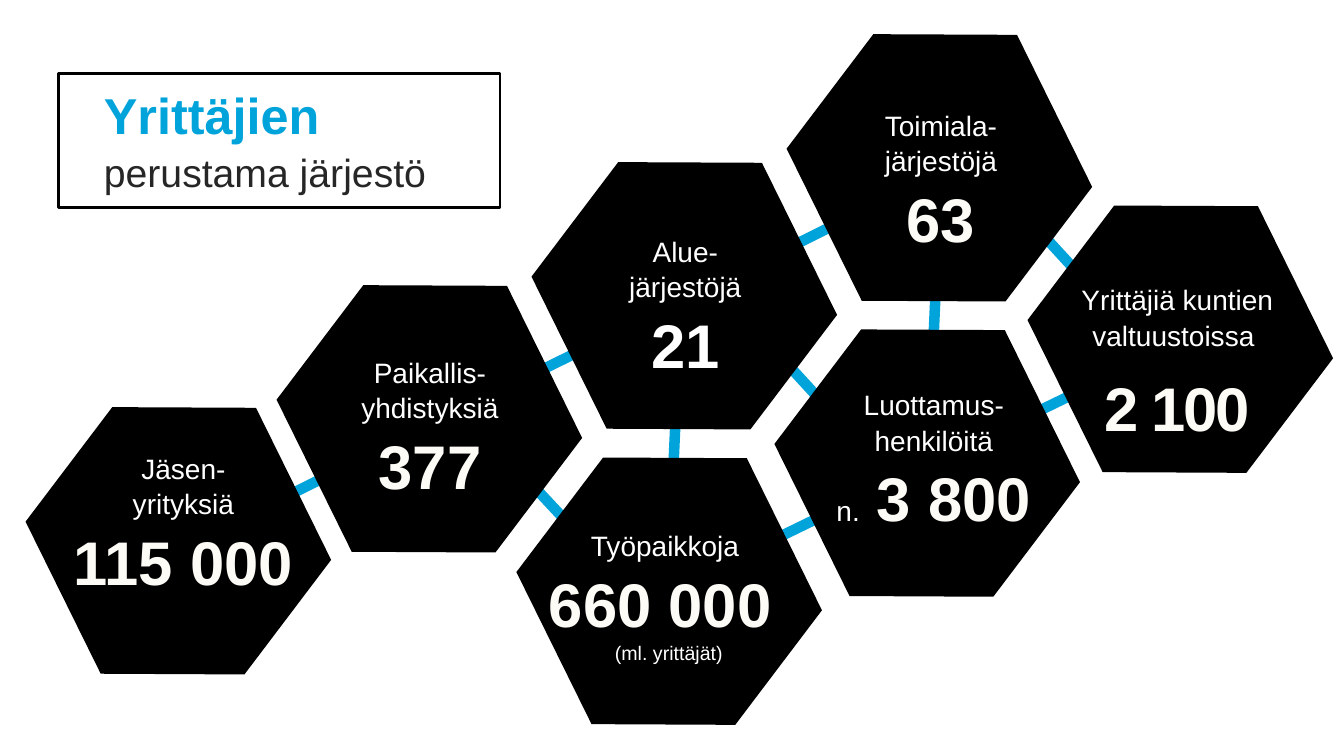
from dataclasses import dataclass

from lxml import etree
from pptx import Presentation
from pptx.dml.color import RGBColor
from pptx.enum.shapes import MSO_CONNECTOR, MSO_SHAPE
from pptx.enum.text import MSO_AUTO_SIZE, PP_ALIGN
from pptx.oxml.ns import qn
from pptx.util import Pt

LINE = MSO_CONNECTOR.STRAIGHT
HEXAGON = MSO_SHAPE.HEXAGON
RECT = MSO_SHAPE.RECTANGLE
GROW = MSO_AUTO_SIZE.SHAPE_TO_FIT_TEXT
FIXED = MSO_AUTO_SIZE.NONE
CENTER = PP_ALIGN.CENTER
LEFT = PP_ALIGN.LEFT


@dataclass(frozen=True)
class Theme:
    """Colours, font and type sizes of the slide."""
    font: str = "Arial"
    blue: str = "00A3DA"
    black: str = "000000"
    gray: str = "262626"
    white: str = "FFFFFF"
    cream: str = "FDFBF6"
    head: int = 36
    sub: int = 28
    label: int = 20
    value: int = 44
    note: int = 14


@dataclass(frozen=True)
class Run:
    """A piece of text with its look."""
    text: str
    size: int
    color: str
    bold: bool = False


class Board:
    """Draws the elements of one slide in a given theme."""

    def __init__(self, slide, theme):
        self.shapes = slide.shapes
        self.theme = theme

    def link(self, x1, y1, x2, y2):
        """Draw a thick blue line."""
        line = self.shapes.add_connector(LINE, Pt(x1), Pt(y1), Pt(x2), Pt(y2))
        line.line.width = Pt(7.5)
        line.line.color.rgb = RGBColor.from_string(self.theme.blue)
        etree.SubElement(line._element.spPr, qn("a:effectLst"))

    def cell(self, left, top):
        """Draw a tilted black hexagon."""
        cell = self.shapes.add_shape(HEXAGON, Pt(left), Pt(top), Pt(213), Pt(183.6))
        cell.rotation = 63.7
        cell.shadow.inherit = False
        cell.fill.solid()
        cell.fill.fore_color.rgb = RGBColor.from_string(self.theme.black)
        cell.line.fill.background()

    def frame(self, left, top, width, height):
        """Draw an outlined box."""
        box = self.shapes.add_shape(RECT, Pt(left), Pt(top), Pt(width), Pt(height))
        box.shadow.inherit = False
        box.fill.background()
        box.line.width = Pt(2)
        box.line.color.rgb = RGBColor.from_string(self.theme.black)

    def style(self, font, run):
        """Apply the look of a run to a font."""
        font.name = self.theme.font
        font.size = Pt(run.size)
        font.bold = run.bold
        font.color.rgb = RGBColor.from_string(run.color)

    def text(self, box, rows, align=CENTER, side=7.2, edge=3.6,
             pitch=1.05, gap=0, fit=GROW):
        """Write rows of runs, one paragraph a row."""
        left, top, width, height = box
        frame = self.shapes.add_textbox(Pt(left), Pt(top), Pt(width), Pt(height)).text_frame
        frame.word_wrap = True
        frame.auto_size = fit
        frame.margin_left = frame.margin_right = Pt(side)
        frame.margin_top = frame.margin_bottom = Pt(edge)
        for index, row in enumerate(rows):
            para = frame.add_paragraph() if index else frame.paragraphs[0]
            para.alignment = align
            para.line_spacing = pitch
            para.space_before = Pt(gap if index else 0)
            for run in row:
                piece = para.add_run()
                piece.text = run.text
                if len(row) > 1:
                    self.style(piece.font, run)
            if len(row) == 1:
                self.style(para.font, row[0])
        return frame


THEME = Theme()

LINKS = [
    (474.5, 423.4, 842.4, 244.8),
    (483.1, 287.3, 480.2, 352.1),
    (668.9, 195.1, 666, 259.9),
    (735.1, 157, 774.7, 200.2),
    (553, 249.8, 592.6, 293),
    (370.8, 336.2, 410.4, 378.7),
    (141.1, 385.9, 692.6, 113),
]

CELLS = [
    (564.5, 28.1), (555.8, 239), (382.3, 119.5), (371.5, 330.5),
    (200.2, 207.4), (20.9, 294.5), (736.6, 150.5),
]


def label(text):
    """Return a row with a plain white label."""
    return [Run(text, THEME.label, THEME.white)]


def value(text, color=THEME.cream):
    """Return a row with a large bold figure."""
    return [Run(text, THEME.value, color, True)]


FACTS = [
    ((204.5, 249.1, 205.2, 108.7),
     [label("Paikallis-"), label("yhdistyksiä"), value("377")]),
    ((390.2, 162.7, 198.7, 108.7),
     [label("Alue-"), label("järjestöjä"), value("21", THEME.white)]),
    ((568.1, 72.7, 208.1, 108.7),
     [label("Toimiala-"), label("järjestöjä"), value("63")]),
    ((562.3, 272.2, 209.5, 108.7),
     [label("Luottamus-"), label("henkilöitä"), label("n.") + value(" 3 800")]),
    ((22.3, 317.5, 217.4, 108.7),
     [label("Jäsen-"), label("yrityksiä"), value("115 000")]),
    ((373, 373, 209.5, 101.5),
     [label("Työpaikkoja "), value("660 000 "),
      [Run("(ml. yrittäjät)", THEME.note, THEME.white)]]),
]


def main():
    """Build and save the slide."""
    deck = Presentation()
    deck.slide_width, deck.slide_height = Pt(960), Pt(540)
    board = Board(deck.slides.add_slide(deck.slide_layouts[6]), THEME)
    for ends in LINKS:
        board.link(*ends)
    board.text((74.2, 56.9, 459.4, 241.2),
               [[Run("Yrittäjien", THEME.head, THEME.blue, True)],
                [Run("perustama järjestö", THEME.sub, THEME.gray)]],
               align=LEFT, side=0, edge=0, pitch=1.08, fit=FIXED)
    for spot in CELLS:
        board.cell(*spot)
    for box, rows in FACTS:
        board.text(box, rows)
    seats = board.text((758.2, 197.3, 165.6, 121.7),
                       [label("Yrittäjiä kuntien valtuustoissa "), value("2 100")],
                       side=0, gap=10, fit=FIXED)
    seats.paragraphs[1].runs[0].font._element.set("spc", "-150")
    board.frame(41.8, 52.6, 315.4, 95.8)
    deck.save("out.pptx")


if __name__ == "__main__":
    main()
